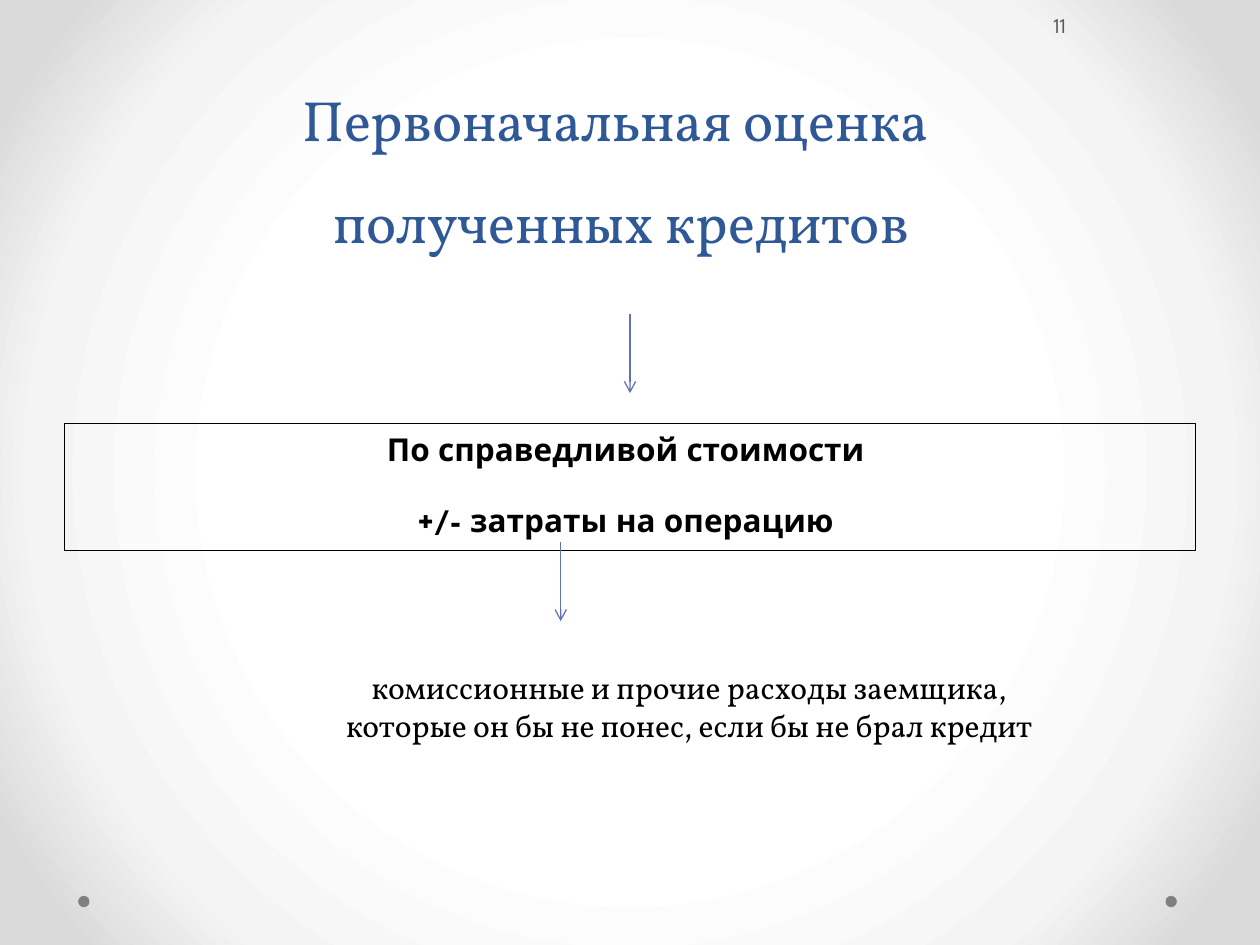
from pptx import Presentation
from pptx.dml.color import RGBColor
from pptx.enum.shapes import MSO_CONNECTOR, MSO_SHAPE
from pptx.enum.text import MSO_ANCHOR, MSO_AUTO_SIZE, PP_ALIGN
from pptx.oxml import parse_xml
from pptx.oxml.ns import qn, nsdecls
from pptx.util import Inches, Pt
from lxml.etree import SubElement

BLUE = RGBColor(0x2F, 0x58, 0x97)
STEEL = RGBColor(0x5C, 0x72, 0xB2)
BLACK = RGBColor(0, 0, 0)
GRAY = RGBColor(0x80, 0x80, 0x80)
DARK = RGBColor(0x59, 0x59, 0x59)
SERIF = "Vollkorn"
SANS = "League Spartan"


def place(shape, left, top, width, height):
    shape.left, shape.top = Inches(left), Inches(top)
    shape.width, shape.height = Inches(width), Inches(height)


def style(par, name, size, color, align=PP_ALIGN.CENTER, bold=False):
    par.alignment = align
    font = par.font
    font.name, font.size, font.bold = name, Pt(size), bold
    font.color.rgb = color


prs = Presentation()
prs.slide_width, prs.slide_height = Inches(10), Inches(7.5)
slide = prs.slides.add_slide(prs.slide_layouts[5])
shapes = slide.shapes

slide.background.fill.solid()
stops = "".join(
    f'<a:gs pos="{pos}000"><a:srgbClr val="{color}"/></a:gs>'
    for pos, color in [(50, "FFFFFF"), (76, "F4F4F4"), (92, "DADADA")]
)
grad = parse_xml(
    f'<a:gradFill {nsdecls("a")} rotWithShape="1"><a:gsLst>{stops}</a:gsLst>'
    '<a:path path="circle"><a:fillToRect l="50000" t="50000" r="50000" b="50000"/>'
    "</a:path></a:gradFill>"
)
back = slide.element.find(".//" + qn("p:bgPr"))
back.replace(back.find(qn("a:solidFill")), grad)

for left in (9.25, 0.62):
    dot = shapes.add_shape(
        MSO_SHAPE.OVAL, Inches(left), Inches(7.11), Inches(0.09), Inches(0.09)
    )
    dot.shadow.inherit = False
    dot.fill.solid()
    dot.fill.fore_color.rgb = GRAY
    dot.line.fill.background()

title = shapes.title
place(title, 0.43, 1.23, 9, 0.84)
frame = title.text_frame
frame.text = "Первоначальная оценка \vполученных кредитов"
frame.auto_size = MSO_AUTO_SIZE.NONE
frame.vertical_anchor = MSO_ANCHOR.BOTTOM
par = frame.paragraphs[0]
style(par, SERIF, 32.4, BLUE)
par.line_spacing = Pt(58)

box = shapes.add_shape(
    MSO_SHAPE.RECTANGLE, Inches(0.51), Inches(3.36), Inches(8.98), Inches(1.01)
)
box.shadow.inherit = False
box.fill.background()
box.line.color.rgb = BLACK
box.line.width = Pt(0.75)
frame = box.text_frame
frame.word_wrap = True
frame.vertical_anchor = MSO_ANCHOR.TOP
frame.text = "По справедливой стоимости \n+/- затраты на операцию "
for par in frame.paragraphs:
    style(par, SANS, 18, BLACK, bold=True)
frame.paragraphs[1].space_before = Pt(19)

number = shapes.add_textbox(Inches(8.33), Inches(0.02), Inches(1.17), Inches(0.36))
frame = number.text_frame
frame.word_wrap = True
frame.vertical_anchor = MSO_ANCHOR.MIDDLE
frame.margin_left = Inches(0.03)
frame.margin_right = Inches(0.05)
frame.text = "11"
style(frame.paragraphs[0], SANS, 12, DARK, PP_ALIGN.LEFT)

for x, top in [(5, 2.49), (4.45, 4.3)]:
    arrow = shapes.add_connector(
        MSO_CONNECTOR.STRAIGHT, Inches(x), Inches(top), Inches(x), Inches(top + 0.63)
    )
    arrow.line.color.rgb = STEEL
    arrow.line.width = Pt(0.75)
    SubElement(arrow.line._get_or_add_ln(), qn("a:tailEnd"), type="arrow")
    SubElement(arrow.element.spPr, qn("a:effectLst"))

note = shapes.add_textbox(Inches(2.48), Inches(5.25), Inches(5.98), Inches(0.71))
frame = note.text_frame
frame.word_wrap = True
frame.text = (
    "комиссионные и прочие расходы заемщика, "
    "которые он бы не понес, если бы не брал кредит"
)
style(frame.paragraphs[0], SERIF, 18, BLACK)

prs.save("out.pptx")
